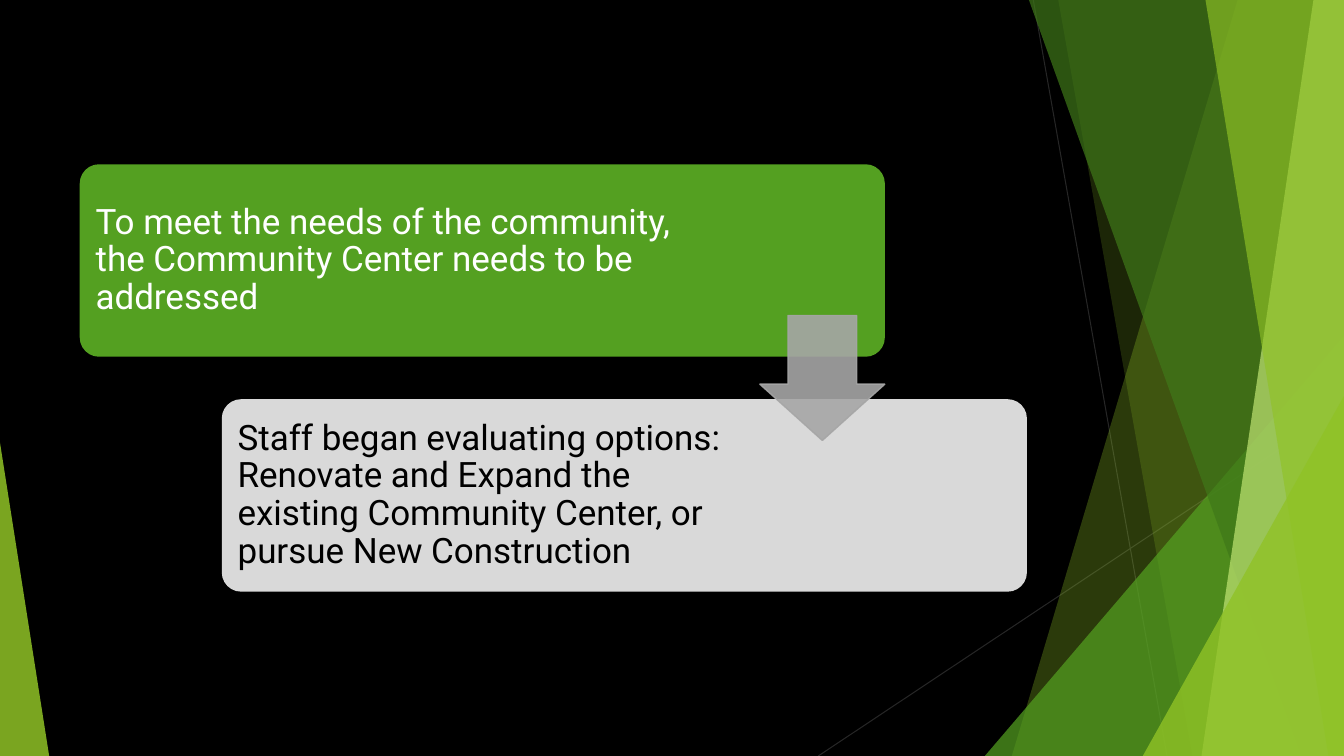
from dataclasses import dataclass

from lxml import etree
from pptx import Presentation
from pptx.dml.color import RGBColor
from pptx.enum.shapes import MSO_CONNECTOR, MSO_SHAPE
from pptx.enum.text import MSO_ANCHOR
from pptx.oxml.ns import qn
from pptx.util import Cm, Pt

TRIANGLE = MSO_SHAPE.ISOSCELES_TRIANGLE
ROUNDED = MSO_SHAPE.ROUNDED_RECTANGLE
DOWN_ARROW = MSO_SHAPE.DOWN_ARROW
STRAIGHT = MSO_CONNECTOR.STRAIGHT
MIDDLE = MSO_ANCHOR.MIDDLE

WIDTH, HEIGHT = 33.87, 19.05


@dataclass(frozen=True)
class Theme:
    background: str = "000000"
    hairline: str = "262626"
    lime: str = "90C226"
    green: str = "54A021"
    forest: str = "3F7819"
    pale: str = "C0E474"
    panel: str = "D9D9D9"
    arrow: str = "A6A6A6"
    light_text: str = "FFFFFF"
    dark_text: str = "000000"
    font: str = "Roboto"
    text_size: int = 25


def paint(fill, color, opacity=100):
    """Make a fill solid, with its opacity in percent."""
    fill.solid()
    fill.fore_color.rgb = RGBColor.from_string(color)
    if opacity < 100:
        for tone in fill._xPr.iter(qn("a:srgbClr")):
            etree.SubElement(tone, qn("a:alpha")).set("val", str(opacity * 1000))


def write(frame, text, *, font, size, color, line_spacing=0.9):
    para = frame.paragraphs[0]
    para.line_spacing = line_spacing
    span = para.add_run()
    span.text = text
    span.font.name = font
    span.font.size = Pt(size)
    span.font.color.rgb = RGBColor.from_string(color)


class Page:
    def __init__(self, deck, theme):
        self.theme = theme
        self.slide = deck.slides.add_slide(deck.slide_layouts[6])
        self.shapes = self.slide.shapes
        paint(self.slide.background.fill, theme.background)

    def hairline(self, *ends):
        line = self.shapes.add_connector(STRAIGHT, *map(Cm, ends))
        line.line.width = Pt(0.75)
        paint(line.line.fill, self.theme.hairline)
        etree.SubElement(line._element.spPr, qn("a:effectLst"))

    def facet(self, top_x, bottom_x, color, opacity):
        """Fill from a slanted left side to the right edge of the slide."""
        builder = self.shapes.build_freeform(Cm(top_x), 0)
        corners = [(WIDTH, 0), (WIDTH, HEIGHT), (bottom_x, HEIGHT)]
        builder.add_line_segments([(Cm(x), Cm(y)) for x, y in corners])
        self.finish(builder.convert_to_shape(), color, opacity)

    def corner(self, left, top, right, peak, color, opacity):
        """Right-angled triangle that stands on the bottom of the slide."""
        self.preset(TRIANGLE, left, top, right - left, HEIGHT - top,
                    [peak], color, opacity)

    def preset(self, kind, left, top, width, height, adjustments, color, opacity=100):
        shape = self.shapes.add_shape(kind, *map(Cm, (left, top, width, height)))
        for index, value in enumerate(adjustments):
            shape.adjustments[index] = value
        self.finish(shape, color, opacity)
        return shape

    def finish(self, shape, color, opacity):
        shape.shadow.inherit = False
        paint(shape.fill, color, opacity)
        shape.line.fill.background()

    def step(self, left, top, text, text_width, color, text_color):
        height, inset = 4.85, 0.15
        self.preset(ROUNDED, left, top, 20.29, height, [0.1], color)
        box = self.shapes.add_textbox(Cm(left + inset), Cm(top + inset),
                                      Cm(text_width), Cm(height - 2 * inset))
        frame = box.text_frame
        frame.word_wrap = True
        frame.vertical_anchor = MIDDLE
        frame.margin_left = frame.margin_right = Cm(0.25)
        frame.margin_top = frame.margin_bottom = Cm(0.25)
        write(frame, text, font=self.theme.font, size=self.theme.text_size,
              color=text_color)

    def arrow(self, left, top, size):
        color, opacity = self.theme.arrow, 90
        arrow = self.preset(DOWN_ARROW, left, top, size, size,
                            [0.55, 0.45], color, opacity)
        arrow.line.width = Pt(1)
        paint(arrow.line.fill, color, opacity)


def main():
    deck = Presentation()
    deck.slide_width, deck.slide_height = Cm(WIDTH), Cm(HEIGHT)
    theme = Theme()
    page = Page(deck, theme)

    page.hairline(26.04, 0, 29.41, HEIGHT)
    page.hairline(WIDTH, 10.24, 20.62, HEIGHT)
    page.facet(31.19, 25.5, theme.lime, 30)
    page.facet(26.67, 30.05, theme.lime, 20)
    page.corner(24.82, 8.46, WIDTH, 1, theme.green, 72)
    page.facet(25.93, 32.79, theme.forest, 70)
    page.facet(33.1, 30.28, theme.pale, 70)
    page.facet(30.38, 33.48, theme.lime, 65)
    page.corner(28.8, 9.98, WIDTH, 1, theme.lime, 80)
    page.corner(0, 11.15, 1.24, 0, theme.lime, 85)

    page.step(2.01, 4.14,
              "To meet the needs of the community, the Community Center "
              "needs to be addressed",
              15.29, theme.green, theme.light_text)
    page.step(5.59, 10.06,
              "Staff began evaluating options: Renovate and Expand the existing "
              "Community Center, or pursue New Construction",
              13.28, theme.panel, theme.dark_text)
    page.arrow(19.15, 7.95, 3.15)

    deck.save("out.pptx")


if __name__ == "__main__":
    main()
